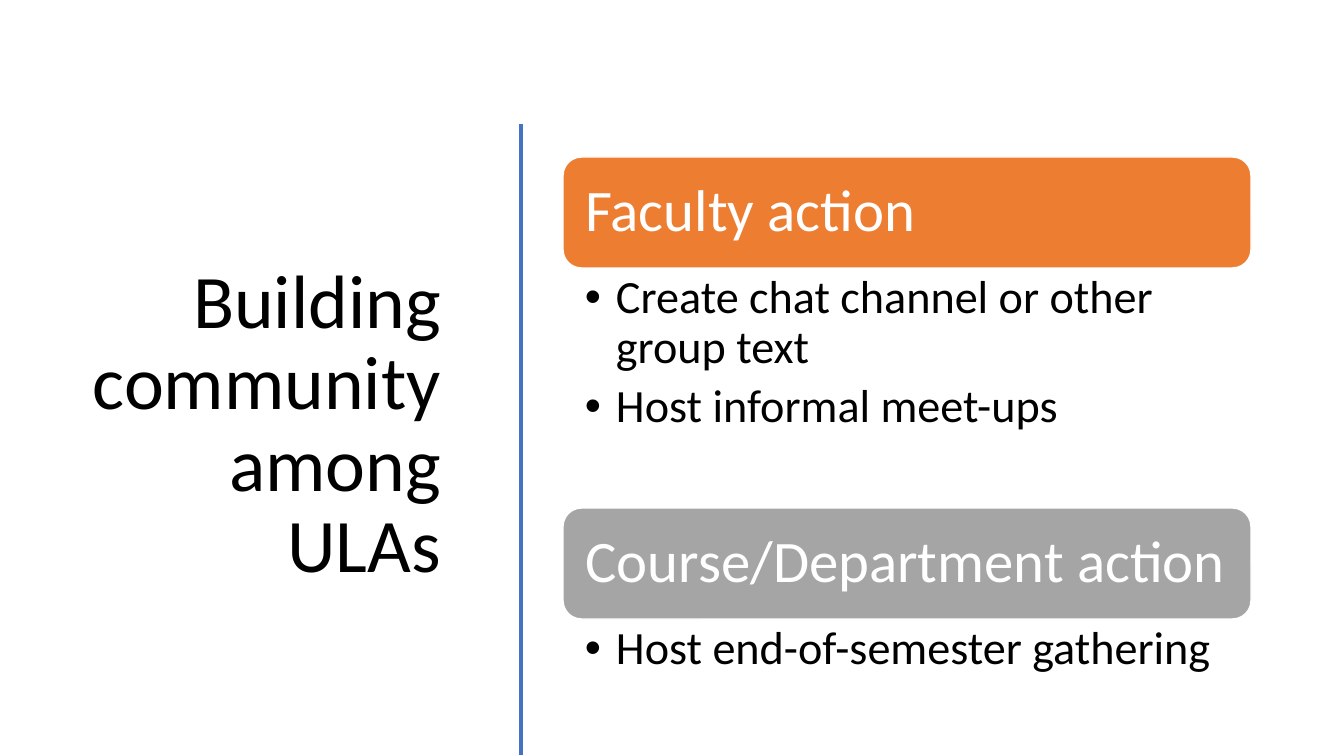
"""Build a slide with a title beside two action cards."""
from lxml.etree import SubElement
from pptx import Presentation
from pptx.dml.color import RGBColor
from pptx.enum.shapes import MSO_CONNECTOR as CONN, MSO_SHAPE as SHAPE
from pptx.enum.text import MSO_ANCHOR as ANCHOR, MSO_AUTO_SIZE as FIT, PP_ALIGN as ALIGN
from pptx.oxml.ns import qn
from pptx.util import Pt

PX = 12192000 / 1344
COLORS = {"text": "000000", "white": "FFFFFF", "rule": "4472C4",
          "faculty": "ED7D31", "course": "A5A5A5"}
CARDS = [
    ("Faculty action", "faculty", 240,
     ["Create chat channel or other group text", "Host informal meet-ups"]),
    ("Course/Department action", "course", 77, ["Host end-of-semester gathering"]),
]
CARD_LEFT, CARD_TOP, CARD_WIDTH, HEADER_HEIGHT = 563, 157, 688, 111


def px(n):
    return round(n * PX)


def rgb(name):
    return RGBColor.from_string(COLORS[name])


def write(p, text, size, color="text", align=ALIGN.LEFT, after=0):
    p.alignment = align
    p.line_spacing = 0.9
    p.space_before, p.space_after = Pt(0), Pt(after)
    r = p.add_run()
    r.text = text
    r.font.name, r.font.size = "Calibri", Pt(size)
    r.font.color.rgb = rgb(color)


class Deck:
    def __init__(self, prs, layout):
        self.font_sizes = {"title": 54, "header": 42, "list": 33}
        self.slide = prs.slides.add_slide(prs.slide_layouts[layout])

    def frame(self, sp, anchor, insets):
        tf = sp.text_frame
        tf.word_wrap, tf.auto_size = True, FIT.NONE
        tf.vertical_anchor = anchor
        (tf.margin_left, tf.margin_top,
         tf.margin_right, tf.margin_bottom) = map(px, insets)
        return tf

    def place(self, sp, *box):
        sp.left, sp.top, sp.width, sp.height = map(px, box)

    def title(self, text, *box):
        sp = self.slide.shapes.title
        self.place(sp, *box)
        tf = self.frame(sp, ANCHOR.MIDDLE, (10, 5, 10, 5))
        write(tf.paragraphs[0], text, self.font_sizes["title"], align=ALIGN.RIGHT)

    def rule(self, x, top, bottom):
        line = self.slide.shapes.add_connector(
            CONN.STRAIGHT, px(x), px(top), px(x), px(bottom))
        line.line.color.rgb, line.line.width = rgb("rule"), Pt(2.25)
        SubElement(line._element.spPr, qn("a:effectLst"))

    def header(self, text, fill, *box):
        sp = self.slide.shapes.add_shape(SHAPE.ROUNDED_RECTANGLE, *map(px, box))
        sp.shadow.inherit = False
        sp.fill.solid()
        sp.fill.fore_color.rgb = rgb(fill)
        sp.line.color.rgb, sp.line.width = rgb("white"), Pt(1)
        tf = self.frame(sp, ANCHOR.MIDDLE, (17, 10, 10, 10))
        write(tf.paragraphs[0], text, self.font_sizes["header"], "white")

    def bullets(self, idx, items, *box):
        sp = self.slide.placeholders[idx]
        self.place(sp, *box)
        tf = self.frame(sp, ANCHOR.TOP, (22, 6, 33, 6))
        for i, item in enumerate(items):
            p = tf.add_paragraph() if i else tf.paragraphs[0]
            write(p, item, self.font_sizes["list"], after=6.6)
            pPr = p._p.get_or_add_pPr()
            pPr.set("marL", str(px(31)))
            pPr.set("indent", str(px(-31)))
            SubElement(pPr, qn("a:buFont"), typeface="Arial")
            SubElement(pPr, qn("a:buChar"), char="•")


def main():
    prs = Presentation()
    prs.slide_width, prs.slide_height = px(1344), px(756)
    deck = Deck(prs, 3)
    deck.title("Building community among ULAs", 53, 118, 398, 616)
    deck.rule(521, 124, 755)
    top = CARD_TOP
    for idx, (heading, fill, list_height, items) in enumerate(CARDS, 1):
        deck.header(heading, fill, CARD_LEFT, top, CARD_WIDTH, HEADER_HEIGHT)
        top += HEADER_HEIGHT
        deck.bullets(idx, items, CARD_LEFT, top, CARD_WIDTH, list_height)
        top += list_height
    prs.save("out.pptx")


if __name__ == "__main__":
    main()
